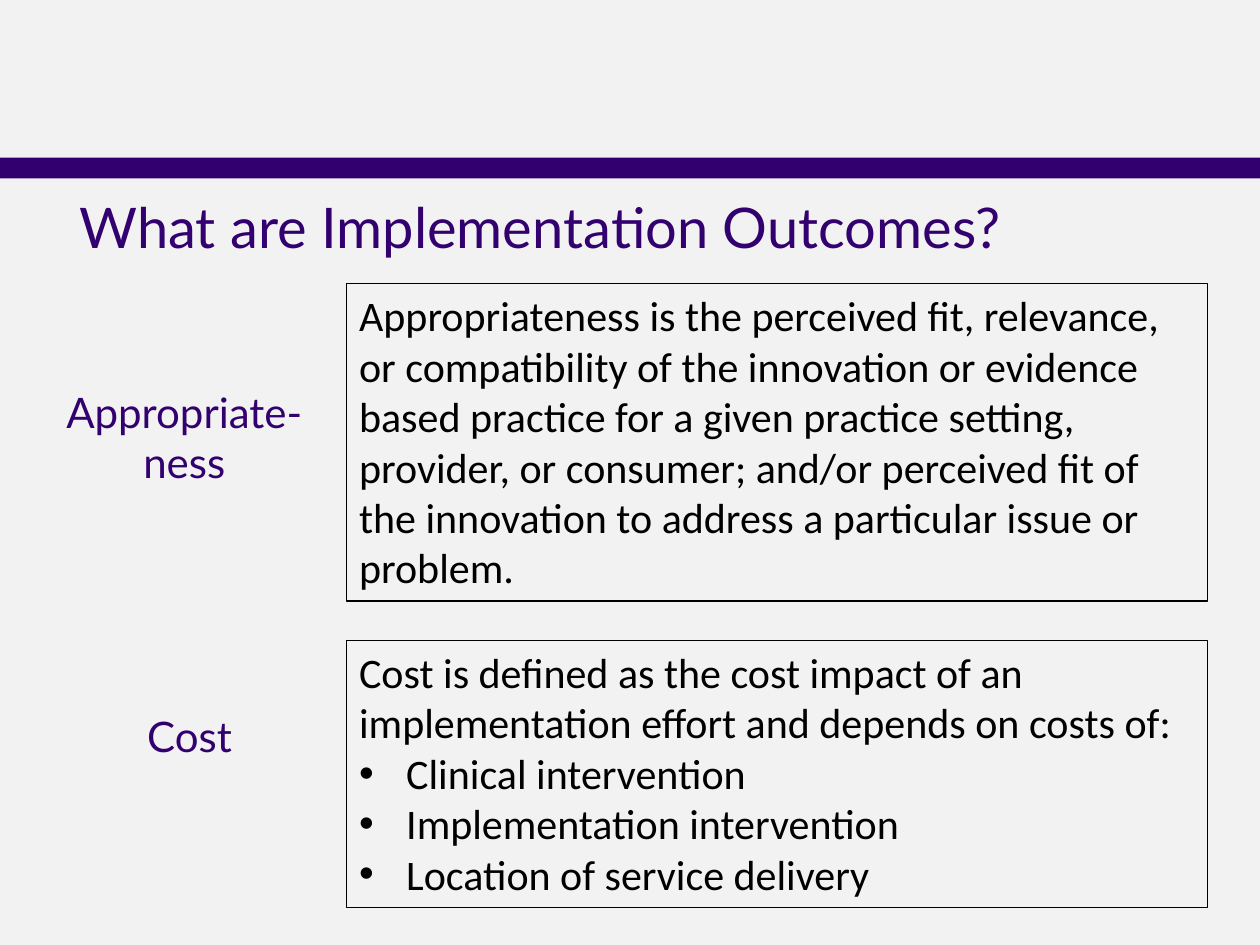
from dataclasses import dataclass

import pptx
import pptx.dml.color
import pptx.enum.shapes
import pptx.enum.text
import pptx.oxml.ns
import pptx.util
from lxml import etree

Cm = pptx.util.Cm
Pt = pptx.util.Pt
RGBColor = pptx.dml.color.RGBColor
PP_ALIGN = pptx.enum.text.PP_ALIGN
MSO_ANCHOR = pptx.enum.text.MSO_ANCHOR
RECTANGLE = pptx.enum.shapes.MSO_SHAPE.RECTANGLE

PURPLE = RGBColor(0x33, 0x00, 0x6F)
BLACK = RGBColor(0x00, 0x00, 0x00)
PALE_GREY = RGBColor(0xF2, 0xF2, 0xF2)

DEFINITION_LEFT = 6.99
DEFINITION_WIDTH = 17.36
BULLET_INDENT = Cm(0.95)


@dataclass(frozen=True)
class Box:
    left: float
    top: float
    width: float
    height: float

    def lengths(self) -> tuple:
        return Cm(self.left), Cm(self.top), Cm(self.width), Cm(self.height)


@dataclass(frozen=True)
class Outcome:
    term: str
    term_box: Box
    definition: str
    definition_top: float
    definition_height: float
    bullets: tuple[str, ...] = ()


OUTCOMES = (
    Outcome(
        "Appropriate-ness",
        Box(0.64, 7.82, 6.15, 1.98),
        "Appropriateness is the perceived ﬁt, relevance, or compatibility of the "
        "innovation or evidence based practice for a given practice setting, "
        "provider, or consumer; and/or perceived ﬁt of the innovation to address "
        "a particular issue or problem.",
        5.72,
        6.4,
    ),
    Outcome(
        "Cost",
        Box(0.43, 13.77, 6.78, 2.11),
        "Cost is deﬁned as the cost impact of an implementation effort and "
        "depends on costs of:",
        12.91,
        5.38,
        (
            "Clinical intervention",
            "Implementation intervention",
            "Location of service delivery",
        ),
    ),
)


def add_heading(slide, text: str, box: Box, size: int) -> None:
    frame = slide.shapes.add_textbox(*box.lengths()).text_frame
    frame.word_wrap = True
    frame.vertical_anchor = MSO_ANCHOR.MIDDLE
    heading = frame.paragraphs[0]
    heading.text = text
    heading.alignment = PP_ALIGN.CENTER
    heading.font.name = "Lato"
    heading.font.size = Pt(size)
    heading.font.color.rgb = PURPLE


def add_bullet(paragraph) -> None:
    properties = paragraph._p.get_or_add_pPr()
    properties.set("marL", str(BULLET_INDENT))
    properties.set("indent", str(-BULLET_INDENT))
    qn = pptx.oxml.ns.qn
    etree.SubElement(properties, qn("a:buFont")).set("typeface", "Arial")
    etree.SubElement(properties, qn("a:buChar")).set("char", "•")


def add_definition(slide, outcome: Outcome) -> None:
    box = Box(
        DEFINITION_LEFT,
        outcome.definition_top,
        DEFINITION_WIDTH,
        outcome.definition_height,
    )
    panel = slide.shapes.add_shape(RECTANGLE, *box.lengths())
    panel.shadow.inherit = False
    panel.fill.background()
    panel.line.color.rgb = BLACK
    panel.line.width = Pt(0.75)
    frame = panel.text_frame
    frame.word_wrap = True
    frame.vertical_anchor = MSO_ANCHOR.TOP
    for index, text in enumerate((outcome.definition, *outcome.bullets)):
        paragraph = frame.add_paragraph() if index else frame.paragraphs[0]
        paragraph.text = text
        paragraph.alignment = PP_ALIGN.LEFT
        if index:
            add_bullet(paragraph)
        paragraph.font.name = "Calibri"
        paragraph.font.size = Pt(24)
        paragraph.font.color.rgb = BLACK


def add_band(slide, box: Box) -> None:
    band = slide.shapes.add_shape(RECTANGLE, *box.lengths())
    band.shadow.inherit = False
    band.fill.solid()
    band.fill.fore_color.rgb = PURPLE
    band.line.fill.background()


def main() -> None:
    deck = pptx.Presentation()
    deck.slide_width = Cm(25.4)
    deck.slide_height = Cm(19.05)
    slide = deck.slides.add_slide(deck.slide_layouts[6])
    slide.background.fill.solid()
    slide.background.fill.fore_color.rgb = PALE_GREY

    add_band(slide, Box(0, 3.18, 25.4, 0.42))
    add_heading(
        slide, "What are Implementation Outcomes?", Box(0.2, 3.6, 21.39, 1.91), 32
    )
    for outcome in OUTCOMES:
        add_heading(slide, outcome.term, outcome.term_box, 24)
        add_definition(slide, outcome)

    deck.save("out.pptx")


if __name__ == "__main__":
    main()
